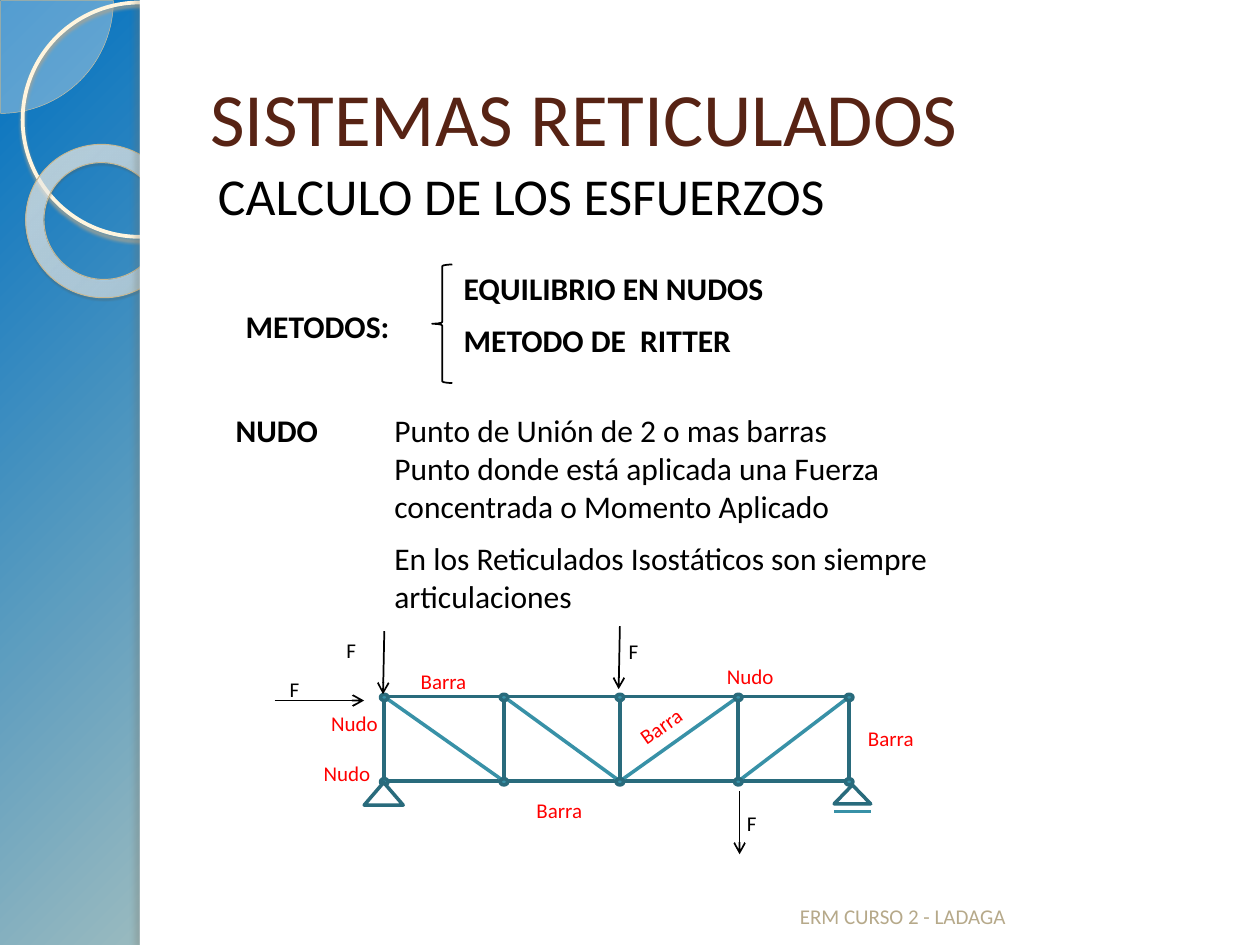
"""Builds the slide on truss systems and the calculation of bar forces."""
from pptx import Presentation
from pptx.dml.color import RGBColor
from pptx.enum.shapes import MSO_CONNECTOR, MSO_SHAPE
from pptx.enum.text import MSO_ANCHOR, MSO_AUTO_SIZE
from pptx.oxml import parse_xml
from pptx.oxml.ns import nsdecls, qn
from pptx.util import Inches, Pt

FONT = "Calibri"
BLACK = RGBColor(0x00, 0x00, 0x00)
WHITE = RGBColor(0xFF, 0xFF, 0xFF)
RED = RGBColor(0xFF, 0x00, 0x00)
BROWN = RGBColor(0x57, 0x23, 0x14)
SAND = RGBColor(0xB6, 0xA9, 0x8A)
CREAM = RGBColor(0xFE, 0xFA, 0xF4)
PALE_GOLD = RGBColor(0xFF, 0xF5, 0xDE)
PIE_EDGE = RGBColor(0xD3, 0xC3, 0x9F)
RING_EDGE = RGBColor(0xC7, 0xB8, 0x93)
TEAL = RGBColor(0x38, 0x91, 0xA7)
DARK_TEAL = RGBColor(0x29, 0x6B, 0x7C)
CIRCLE_SHADOW = RGBColor(0xB0, 0xA6, 0x8F)
RING_SHADOW = RGBColor(0x5A, 0x54, 0x44)
EDGE_SHADOW = RGBColor(0x73, 0x6F, 0x63)
SKY_STOPS = [
    (0, RGBColor(0x00, 0x70, 0xC0), 100),
    (82, RGBColor(0xFF, 0xEB, 0xBE), 100),
    (100, RGBColor(0xC9, 0xB4, 0x84), 100),
]
RING_STOPS = [
    (0, RGBColor(0xFF, 0xFC, 0xF6), 70),
    (70, RGBColor(0xFF, 0xFE, 0xFB), 55),
    (100, RGBColor(0xF0, 0xD2, 0x8E), 60),
]

JOINTS_X = [3.05, 4, 4.92, 5.86, 6.74]
TOP_Y, BOTTOM_Y = 5.53, 6.2


def color_xml(color, alpha):
    return f'<a:srgbClr val="{color}"><a:alpha val="{alpha * 1000}"/></a:srgbClr>'


def set_radial_gradient(owner, fill, stops, focus):
    fill.gradient()
    gradient = owner.element.find(".//" + qn("a:gradFill"))
    stops_xml = "".join(
        f'<a:gs pos="{position * 1000}">{color_xml(color, alpha)}</a:gs>'
        for position, color, alpha in stops
    )
    left, top, right, bottom = (side * 1000 for side in focus)
    gradient.getparent().replace(gradient, parse_xml(
        f'<a:gradFill {nsdecls("a")} rotWithShape="1"><a:gsLst>{stops_xml}</a:gsLst>'
        f'<a:path path="circle"><a:fillToRect l="{left}" t="{top}" r="{right}" b="{bottom}"/>'
        '</a:path></a:gradFill>'
    ))


def set_shadow(shape, color, alpha, blur, distance, angle):
    effects = shape.element.spPr.find(qn("a:effectLst"))
    effects.append(parse_xml(
        f'<a:outerShdw {nsdecls("a")} blurRad="{Pt(blur)}" dist="{Pt(distance)}" '
        f'dir="{angle * 60000}" algn="tl" rotWithShape="0">{color_xml(color, alpha)}</a:outerShdw>'
    ))


def add_figure(slide, kind, box, fill=None, line=None, width=1):
    figure = slide.shapes.add_shape(kind, *map(Inches, box))
    figure.shadow.inherit = False
    if fill is None:
        figure.fill.background()
    else:
        figure.fill.solid()
        figure.fill.fore_color.rgb = fill
    if line is None:
        figure.line.fill.background()
    else:
        figure.line.color.rgb = line
        figure.line.width = Pt(width)
    return figure


def add_line(slide, start, end, color, width, arrow=False):
    line = slide.shapes.add_connector(MSO_CONNECTOR.STRAIGHT, *map(Inches, start + end))
    line.line.color.rgb = color
    line.line.width = Pt(width)
    if arrow:
        line.line._get_or_add_ln().append(parse_xml(f'<a:tailEnd {nsdecls("a")} type="arrow"/>'))
    line.element.spPr.append(parse_xml(f'<a:effectLst {nsdecls("a")}/>'))


def format_runs(text_frame, size, color, bold=False):
    for paragraph in text_frame.paragraphs:
        for run in paragraph.runs:
            run.font.name = FONT
            run.font.size = Pt(size)
            run.font.color.rgb = color
            run.font.bold = bold


def add_text(slide, text, box, size, color, anchor=MSO_ANCHOR.TOP):
    label = slide.shapes.add_textbox(*map(Inches, box))
    label.text_frame.word_wrap = True
    label.text_frame.vertical_anchor = anchor
    label.text_frame.text = text
    format_runs(label.text_frame, size, color)
    return label


def add_label(slide, text, left, top, color):
    label = add_text(slide, text, (left, top, 0.6, 0.3), 12, color)
    label.text_frame.auto_size = MSO_AUTO_SIZE.SHAPE_TO_FIT_TEXT
    return label


def add_definition_table(slide, box, columns, rows, heading, entries, bold):
    table = slide.shapes.add_table(2, 2, *map(Inches, box)).table
    table.first_row = table.horz_banding = False
    for column, width in zip(table.columns, columns):
        column.width = Inches(width)
    for row, height in zip(table.rows, rows):
        row.height = Inches(height)
    table.cell(0, 0).merge(table.cell(1, 0))
    for cell in table.iter_cells():
        cell.fill.background()
    table.cell(0, 0).text = heading
    format_runs(table.cell(0, 0).text_frame, 18, BLACK, True)
    for index, entry in enumerate(entries):
        table.cell(index, 1).text = entry
        format_runs(table.cell(index, 1).text_frame, 18, BLACK, bold)
    return table


def add_sidebar(slide):
    set_radial_gradient(slide, slide.background.fill, SKY_STOPS, (-24, -20, 124, 120))
    quarter = add_figure(slide, MSO_SHAPE.PIE, (-0.89, -0.89, 1.79, 1.79), CREAM, PIE_EDGE, 0.25)
    quarter.adjustments[0] = 0
    quarter.adjustments[1] = 54.02
    tint = quarter.element.spPr.find(qn("a:solidFill"))
    tint.replace(tint[0], parse_xml(
        color_xml(CREAM, 33).replace("<a:srgbClr", f'<a:srgbClr {nsdecls("a")}', 1)
    ))
    circle = add_figure(slide, MSO_SHAPE.OVAL, (0.18, 0.02, 1.86, 1.86), None, PALE_GOLD, 2.15)
    set_shadow(circle, CIRCLE_SHADOW, 85, 2, 2, 90)
    ring = add_figure(slide, MSO_SHAPE.DONUT, (0.2, 1.15, 1.23, 1.21), CREAM, RING_EDGE, 0.58)
    ring.adjustments[0] = 0.12
    ring.rotation = 38.6
    set_radial_gradient(ring, ring.fill, RING_STOPS, (-408, -50, 508, 150))
    set_shadow(ring, RING_SHADOW, 35, 1, 1.2, 75)
    add_figure(slide, MSO_SHAPE.RECTANGLE, (1.11, 0, 8.89, 7.5), WHITE)
    edge = add_figure(slide, MSO_SHAPE.RECTANGLE, (1.11, 0, 0.08, 7.5), WHITE)
    set_shadow(edge, EDGE_SHADOW, 25, 3, 3, 180)


def add_truss(slide):
    add_line(slide, (6.62, 6.44), (6.91, 6.44), TEAL, 1.5)
    for first, last in [(0, 4), (0, 2), (1, 3)]:
        left, right = JOINTS_X[first], JOINTS_X[last]
        add_figure(slide, MSO_SHAPE.RECTANGLE, (left, TOP_Y, right - left, BOTTOM_Y - TOP_Y),
                   None, DARK_TEAL, 2)
    for upper, lower in [(0, 1), (1, 2), (3, 2), (4, 3)]:
        add_line(slide, (JOINTS_X[upper], TOP_Y), (JOINTS_X[lower], BOTTOM_Y), TEAL, 2)
    for x in JOINTS_X:
        for y in (TOP_Y, BOTTOM_Y):
            add_figure(slide, MSO_SHAPE.OVAL, (x - 0.03, y - 0.02, 0.06, 0.05), TEAL, DARK_TEAL, 2)
    for support in [(2.89, 6.21, 0.31, 0.18), (6.62, 6.23, 0.29, 0.15)]:
        add_figure(slide, MSO_SHAPE.ISOSCELES_TRIANGLE, support, WHITE, DARK_TEAL, 2)


def add_forces_and_names(slide):
    for start, end in [((3.05, 5.01), (3.04, 5.51)), ((4.92, 4.97), (4.91, 5.47)),
                       ((2.18, 5.56), (2.89, 5.56)), ((5.87, 6.28), (5.87, 6.78))]:
        add_line(slide, start, end, BLACK, 1, arrow=True)
    for left, top in [(2.65, 5.01), (2.2, 5.32), (4.89, 5.02), (5.83, 6.38)]:
        add_label(slide, "F", left, top, BLACK)
    for left, top in [(5.67, 5.22), (2.53, 5.59), (2.47, 5.99)]:
        add_label(slide, "Nudo", left, top, RED)
    for left, top in [(6.79, 5.71), (4.16, 6.28), (3.24, 5.26)]:
        add_label(slide, "Barra", left, top, RED)
    add_label(slide, "Barra", 4.96, 5.6, RED).rotation = 324.9


def main():
    presentation = Presentation()
    presentation.slide_width, presentation.slide_height = Inches(10), Inches(7.5)
    slide = presentation.slides.add_slide(presentation.slide_layouts[6])
    add_sidebar(slide)
    add_text(slide, "SISTEMAS RETICULADOS", (1.57, 0.3, 8.2, 1.25), 43, BROWN, MSO_ANCHOR.MIDDLE)
    subtitle = add_text(slide, "CALCULO DE LOS ESFUERZOS", (1.54, 1.31, 8.2, 0.55), 29.6, BLACK)
    subtitle.text_frame.margin_left = Inches(0.19)
    subtitle.text_frame.paragraphs[0].line_spacing = 0.9
    add_text(slide, "ERM CURSO 2 - LADAGA", (6.25, 6.9, 3.17, 0.52), 12, SAND, MSO_ANCHOR.BOTTOM)
    add_truss(slide)
    methods = add_definition_table(
        slide, (1.85, 2.1, 6.66, 0.82), (1.73, 4.93), (0.41, 0.41), "METODOS:",
        ["EQUILIBRIO EN NUDOS", "METODO DE  RITTER"], True)
    methods.cell(0, 0).margin_top = Inches(0.35)
    add_figure(slide, MSO_SHAPE.LEFT_BRACE, (3.43, 2.1, 0.16, 0.94), None, BLACK)
    add_definition_table(
        slide, (1.77, 3.22, 6.67, 1.7), (1.26, 5.41), (1.02, 0.68), "NUDO",
        ["Punto de Unión de 2 o mas barras\n"
         "Punto donde está aplicada una Fuerza  concentrada o Momento Aplicado",
         "En los Reticulados Isostáticos son siempre articulaciones"], False)
    add_forces_and_names(slide)
    presentation.save("out.pptx")


if __name__ == "__main__":
    main()
